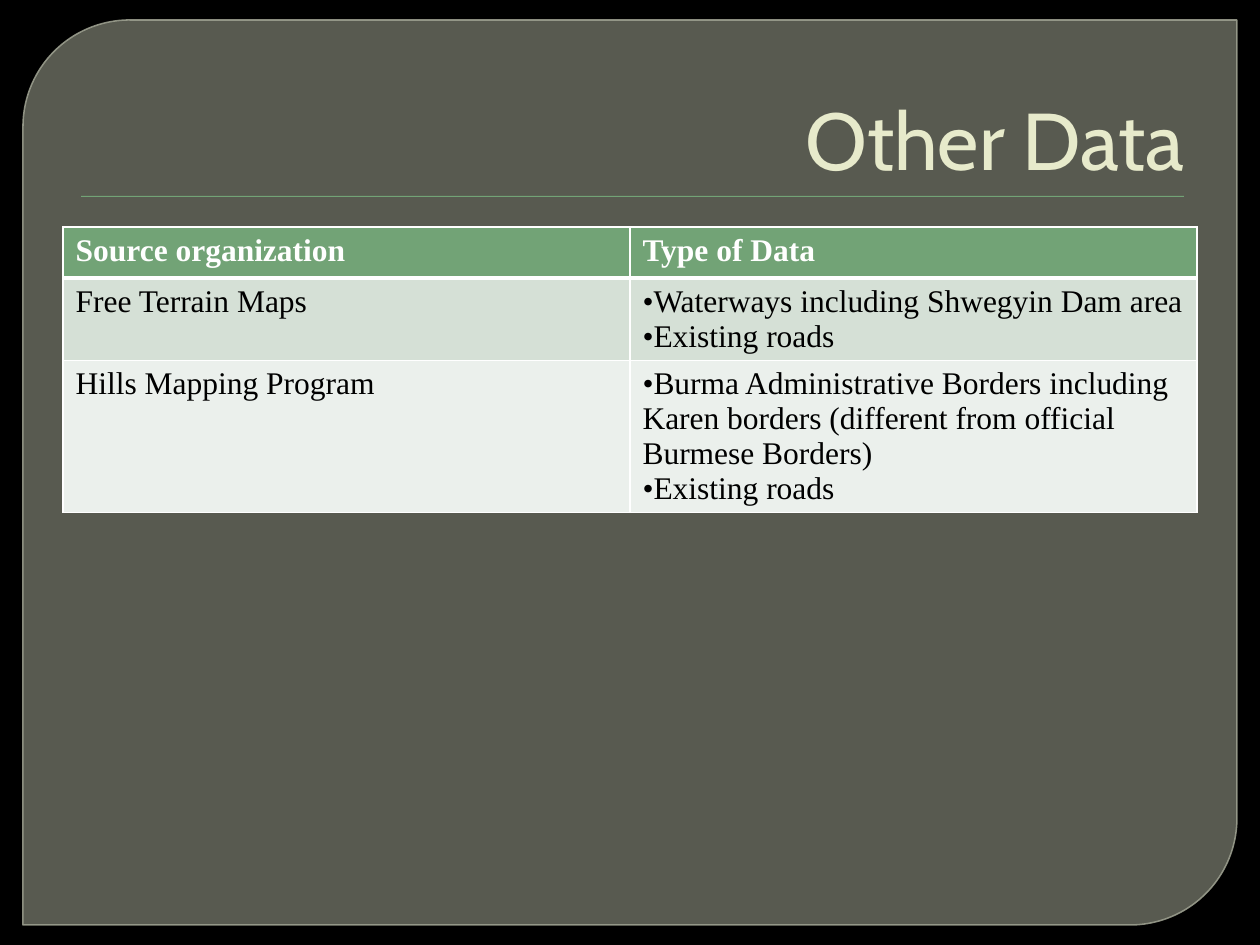
from lxml import etree
from pptx import Presentation
from pptx.dml.color import RGBColor
from pptx.enum.shapes import MSO_SHAPE
from pptx.enum.text import MSO_ANCHOR, MSO_AUTO_SIZE, PP_ALIGN
from pptx.oxml.ns import qn
from pptx.util import Pt

PX = 914400 // 126
PANEL_SHAPE, RULE_SHAPE = MSO_SHAPE.ROUND_2_DIAG_RECTANGLE, MSO_SHAPE.RECTANGLE
BOTTOM, RIGHT, NO_AUTOFIT = MSO_ANCHOR.BOTTOM, PP_ALIGN.RIGHT, MSO_AUTO_SIZE.NONE
TABLE_FONT = "Times New Roman"

TITLE = "Other Data"
HEADERS = ["Source organization", "Type of Data"]
SOURCES = [
    ("Free Terrain Maps",
     ["Waterways including Shwegyin Dam area", "Existing roads"]),
    ("Hills Mapping Program",
     ["Burma Administrative Borders including Karen borders "
      "(different from official Burmese Borders)", "Existing roads"]),
]
ROW_HEIGHTS = [51, 82, 152]
ROW_FILLS = ["72A376", "D5E0D6", "EBF0EC"]


def color(value):
    return RGBColor.from_string(value)


def px(*lengths):
    return [length * PX for length in lengths]


def set_alpha(fill_parent, percent):
    """Make the solid colour inside fill_parent partly transparent."""
    tone = fill_parent.find(qn("a:solidFill"))[0]
    etree.SubElement(tone, qn("a:alpha"), val=str(percent * 1000))


def add_shadow(shape):
    """Cast a soft one-point shadow straight down."""
    effects = shape.element.spPr.find(qn("a:effectLst"))
    shadow = etree.SubElement(effects, qn("a:outerShdw"), blurRad=str(Pt(1)),
                              dist=str(Pt(1)), dir="5400000")
    tone = etree.SubElement(shadow, qn("a:srgbClr"), val="000000")
    etree.SubElement(tone, qn("a:alpha"), val="75000")


def add_block(slide, kind, bounds, fill):
    block = slide.shapes.add_shape(kind, *px(*bounds))
    block.shadow.inherit = False
    block.fill.solid()
    block.fill.fore_color.rgb = color(fill)
    block.line.fill.background()
    return block


def set_header_borders(cell):
    """White borders, placed ahead of the cell fill as the schema asks."""
    properties = cell._tc.get_or_add_tcPr()
    sides = [("lnL", 1), ("lnR", 1), ("lnT", 1), ("lnB", 3)]
    for position, (side, width) in enumerate(sides):
        line = etree.Element(qn(f"a:{side}"), w=str(Pt(width)))
        fill = etree.SubElement(line, qn("a:solidFill"))
        etree.SubElement(fill, qn("a:srgbClr"), val="FFFFFF")
        properties.insert(position, line)


def add_bullet(para):
    properties = para._p.get_or_add_pPr()
    bullet_font = etree.Element(qn("a:buFont"), typeface=TABLE_FONT)
    bullet = etree.Element(qn("a:buChar"), char="•")
    properties.insert(0, bullet_font)
    properties.insert(1, bullet)


def fill_cell(cell, lines, fill, header, bulleted):
    cell.fill.solid()
    cell.fill.fore_color.rgb = color(fill)
    if header:
        set_header_borders(cell)
    cell.text = "\n".join(lines)
    for para in cell.text_frame.paragraphs:
        para.font.name = TABLE_FONT
        para.font.size = Pt(18)
        para.font.bold = header
        para.font.color.rgb = color("FFFFFF" if header else "000000")
        if bulleted:
            add_bullet(para)


def add_source_table(slide):
    rows = [([HEADERS[0]], [HEADERS[1]])]
    rows += [([name], data) for name, data in SOURCES]
    bounds = px(63, 227, 1134, sum(ROW_HEIGHTS))
    table = slide.shapes.add_table(len(rows), len(HEADERS), *bounds).table
    for r, row in enumerate(rows):
        table.rows[r].height = ROW_HEIGHTS[r] * PX
        for c, lines in enumerate(row):
            fill_cell(table.cell(r, c), lines, ROW_FILLS[r],
                      header=r == 0, bulleted=r > 0 and c == 1)


def main():
    deck = Presentation()
    deck.slide_width, deck.slide_height = px(1260, 945)
    slide = deck.slides.add_slide(deck.slide_layouts[5])
    slide.background.fill.solid()
    slide.background.fill.fore_color.rgb = color("000000")

    panel = add_block(slide, PANEL_SHAPE, (23, 20, 1214, 905), "888B7B")
    panel.adjustments[0] = 0.118
    panel.adjustments[1] = 0
    panel.line.color.rgb = color("9DA090")
    panel.line.width = Pt(0.87)
    set_alpha(panel.element.spPr, 65)
    set_alpha(panel.element.spPr.find(qn("a:ln")), 88)
    rule = add_block(slide, RULE_SHAPE, (81, 196, 1103, 1), "72A376")
    add_shadow(rule)

    title = slide.shapes.title
    title.element.getparent().append(title.element)  # bring above the panel
    title.left, title.top, title.width, title.height = px(63, 35, 1134, 158)
    frame = title.text_frame
    frame.text = TITLE
    frame.vertical_anchor = BOTTOM
    frame.auto_size = NO_AUTOFIT
    para = frame.paragraphs[0]
    para.alignment = RIGHT
    para.font.name = "Cabin"
    para.font.size = Pt(46)
    para.font.color.rgb = color("E7EACB")

    add_source_table(slide)
    deck.save("out.pptx")


if __name__ == "__main__":
    main()
